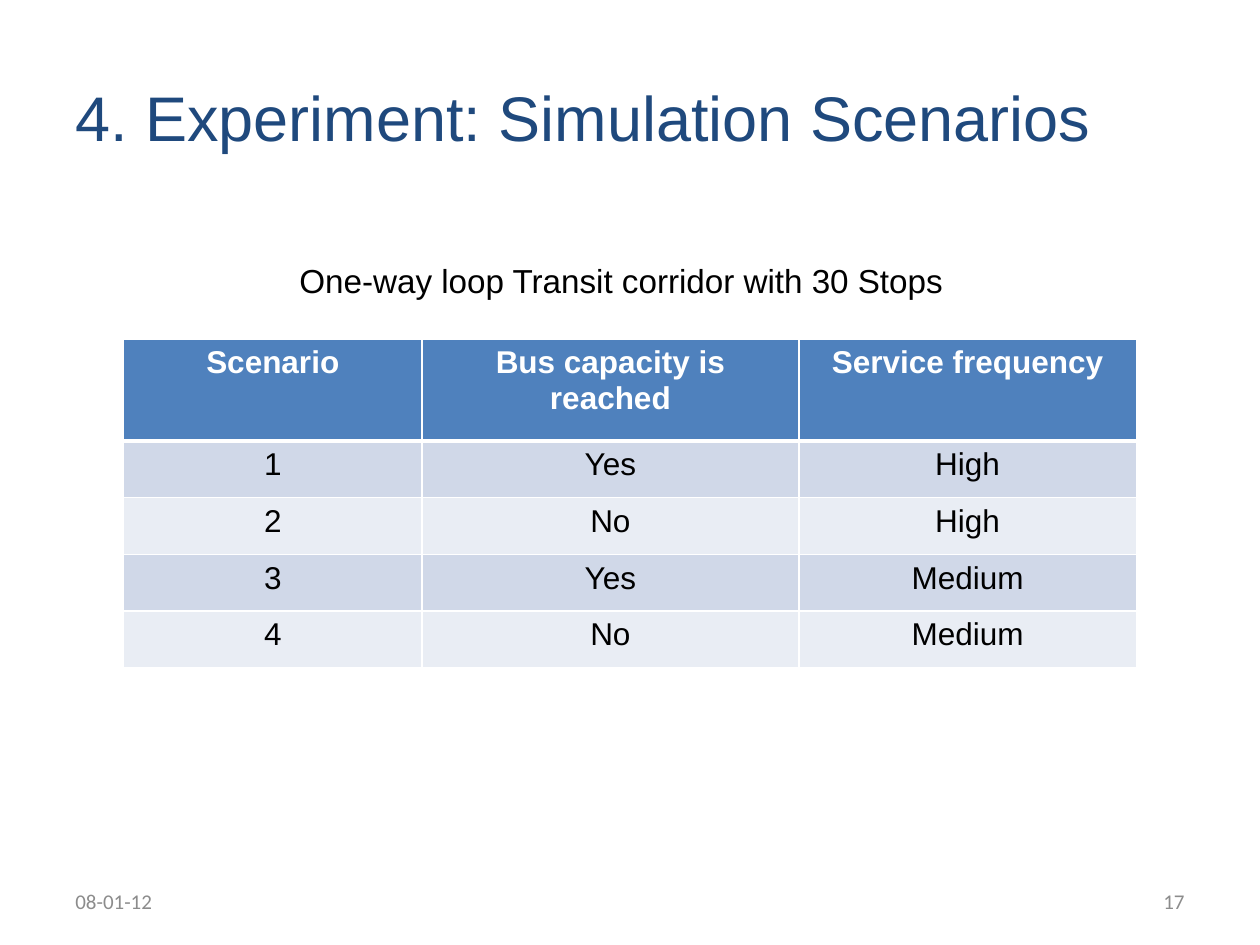
from lxml import etree
from pptx import Presentation
from pptx.dml.color import RGBColor
from pptx.enum import text
from pptx.oxml import ns
from pptx.util import Inches, Pt

HEADINGS = ("Scenario", "Bus capacity is reached", "Service frequency")
SCENARIOS = (
    ("1", "Yes", "High"),
    ("2", "No", "High"),
    ("3", "Yes", "Medium"),
    ("4", "No", "Medium"),
)
COLUMN_WIDTHS = (2.37, 2.99, 2.68)
HEADING_HEIGHT, SCENARIO_HEIGHT = 0.81, 0.45
HEADING_FILL, BAND_FILLS = "4F81BD", ("D0D8E8", "E9EDF4")
LEFT, CENTER, RIGHT = text.PP_ALIGN.LEFT, text.PP_ALIGN.CENTER, text.PP_ALIGN.RIGHT
TOP, MIDDLE = text.MSO_ANCHOR.TOP, text.MSO_ANCHOR.MIDDLE


def color(hex_code):
    """Turn a hex string into a colour."""
    return RGBColor.from_string(hex_code)


def style(paragraph, size, font, hex_code, align, bold=False):
    """Set the font and alignment of a paragraph."""
    paragraph.alignment = align
    paragraph.font.size = Pt(size)
    paragraph.font.name = font
    paragraph.font.bold = bold
    paragraph.font.color.rgb = color(hex_code)


def add_line(slide, box, words, size, font, hex_code, align=LEFT, anchor=MIDDLE):
    """Place one paragraph in a box and return the paragraph."""
    frame = slide.shapes.add_textbox(*map(Inches, box)).text_frame
    frame.word_wrap = True
    frame.vertical_anchor = anchor
    paragraph = frame.paragraphs[0]
    paragraph.text = words
    style(paragraph, size, font, hex_code, align)
    return paragraph


def add_title(slide, box):
    """Place the title with its hanging indent."""
    title = add_line(slide, box, "4. Experiment: Simulation Scenarios", 36, "Arial", "1F497D")
    properties = title._p.get_or_add_pPr()
    properties.set("marL", str(Inches(0.92)))
    properties.set("indent", str(-Inches(0.92)))


def add_caption(slide, box):
    """Place the line above the table."""
    caption = add_line(slide, box, "One-way loop Transit corridor with 30 Stops",
                       19, "Arial", "000000", CENTER, TOP)
    caption.line_spacing = 1.5


def set_borders(cell, hex_code, widths):
    """Draw the left, right, top and bottom borders of a cell."""
    properties = cell._tc.get_or_add_tcPr()
    for side, width in zip("LRTB", widths):
        line = etree.SubElement(properties, ns.qn(f"a:ln{side}"), w=str(Pt(width)))
        fill = etree.SubElement(line, ns.qn("a:solidFill"))
        etree.SubElement(fill, ns.qn("a:srgbClr"), val=hex_code)


def add_scenarios(slide, left, top):
    """Place the scenario table with its top left corner at a point."""
    rows = (HEADINGS, *SCENARIOS)
    heights = (HEADING_HEIGHT, *[SCENARIO_HEIGHT] * len(SCENARIOS))
    size = sum(COLUMN_WIDTHS), sum(heights)
    table = slide.shapes.add_table(len(rows), len(HEADINGS),
                                   *map(Inches, (left, top, *size))).table
    for column, width in zip(table.columns, COLUMN_WIDTHS):
        column.width = Inches(width)
    for index, (row, height, entries) in enumerate(zip(table.rows, heights, rows)):
        row.height = Inches(height)
        heading = index == 0
        for cell, entry in zip(row.cells, entries):
            cell.text = entry
            style(cell.text_frame.paragraphs[0], 18, "Arial",
                  "FFFFFF" if heading else "000000", CENTER, heading)
            set_borders(cell, "FFFFFF", (1, 1, 3 if index == 1 else 1, 3 if heading else 1))
            cell.fill.solid()
            cell.fill.fore_color.rgb = color(
                HEADING_FILL if heading else BAND_FILLS[(index - 1) % 2])


def add_footer(slide, left, top, width, height):
    """Place the date at the left end and the page number at the right end."""
    part = 2.33
    for x, words, align in ((left, "08-01-12", LEFT), (left + width - part, "17", RIGHT)):
        add_line(slide, (x, top, part, height), words, 12, "Calibri", "8C8C8C", align)


def main():
    """Build the slide and save it."""
    deck = Presentation()
    deck.slide_width, deck.slide_height = Inches(10), Inches(7.5)
    slide = deck.slides.add_slide(deck.slide_layouts[6])
    add_title(slide, (0.5, 0.3, 9.5, 1.25))
    add_scenarios(slide, 0.98, 2.69)
    add_footer(slide, 0.5, 6.95, 9, 0.4)
    add_caption(slide, (0.12, 1.86, 9.62, 0.52))
    deck.save("out.pptx")


if __name__ == "__main__":
    main()
